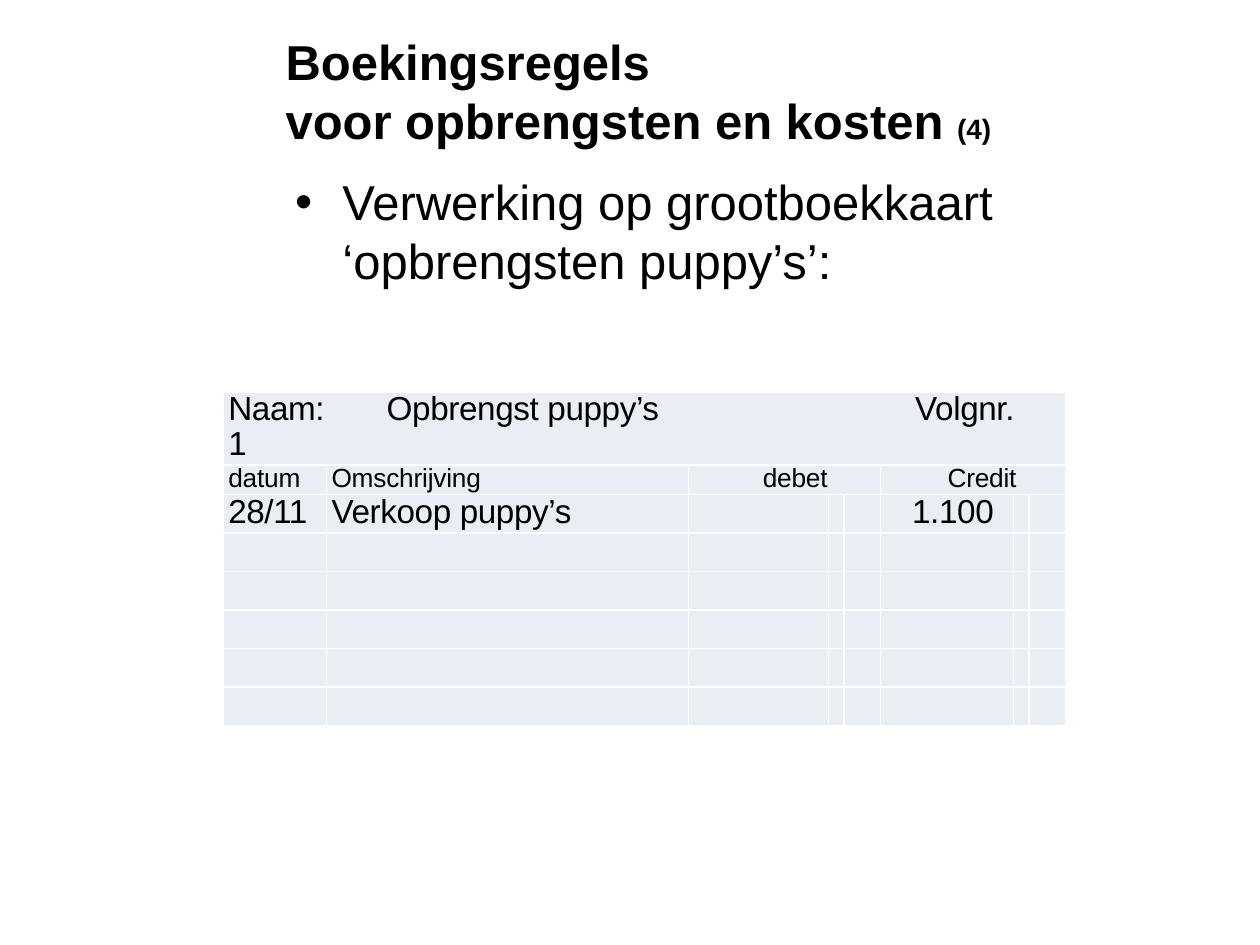
from dataclasses import dataclass

from lxml import etree
from pptx import Presentation
from pptx import util as u
from pptx.dml.color import RGBColor
from pptx.enum import text
from pptx.oxml import ns


@dataclass(frozen=True)
class Theme:
    """Colours, typeface and type sizes of the slide."""
    font: str = "Arial"
    ink: str = "000000"
    cell: str = "E9EDF4"
    rule: str = "FFFFFF"
    heading: int = 28
    counter: int = 16
    entry: int = 19
    label: int = 15


class LedgerPage:
    """Holds the theme and the current slide and adds its elements."""

    def __init__(self, deck, theme):
        self.theme = theme
        self.page = deck.slides.add_slide(deck.slide_layouts[1])

    def place(self, box, left, top, width, height):
        """Move a placeholder and return its text frame."""
        box.left, box.top = u.Pt(left), u.Pt(top)
        box.width, box.height = u.Pt(width), u.Pt(height)
        frame = box.text_frame
        frame.word_wrap = True
        frame.auto_size = text.MSO_AUTO_SIZE.NONE
        return frame

    def span(self, para, words, size, bold=False, tracking=0):
        """Add one formatted run."""
        span = para.add_run()
        span.text = words
        span.font.name = self.theme.font
        span.font.size = u.Pt(size)
        span.font.bold = bold
        span.font.color.rgb = RGBColor.from_string(self.theme.ink)
        if tracking:
            span._r.get_or_add_rPr().set("spc", str(round(tracking * 100)))

    def title(self, lines, counter, area):
        """Fill the title with lines and a small counter."""
        frame = self.place(self.page.shapes.title, *area)
        frame.vertical_anchor = text.MSO_ANCHOR.MIDDLE
        para = frame.paragraphs[0]
        para.alignment = text.PP_ALIGN.LEFT
        for number, line in enumerate(lines):
            if number:
                para.add_line_break()
            self.span(para, line, self.theme.heading, bold=True)
        self.span(para, counter, self.theme.counter, bold=True)

    def bullet(self, words, area, indent):
        """Fill the body with one bulleted paragraph."""
        para = self.place(self.page.placeholders[1], *area).paragraphs[0]
        settings = para._p.get_or_add_pPr()
        settings.set("marL", str(u.Pt(indent)))
        settings.set("indent", str(-u.Pt(indent)))
        etree.SubElement(settings, ns.qn("a:buChar"), char="•")
        para.space_before = u.Pt(0)
        self.span(para, words, self.theme.heading)

    def style_cell(self, cell):
        """Give a cell its insets, white rules and fill."""
        cell.margin_left = cell.margin_right = u.Pt(3)
        cell.margin_top = cell.margin_bottom = u.Pt(0)
        settings = cell._tc.get_or_add_tcPr()
        for side in ("lnL", "lnR", "lnT", "lnB"):
            line = etree.SubElement(settings, ns.qn(f"a:{side}"), w=str(u.Pt(1)))
            fill = etree.SubElement(line, ns.qn("a:solidFill"))
            etree.SubElement(fill, ns.qn("a:srgbClr"), val=self.theme.rule)
        cell.fill.solid()
        cell.fill.fore_color.rgb = RGBColor.from_string(self.theme.cell)

    def write_cell(self, cell, lines, size, tracking, tabs=(), indent=0):
        """Write lines into a cell with tab stops and an indent."""
        para = cell.text_frame.paragraphs[0]
        settings = para._p.get_or_add_pPr()
        settings.set("marL", str(u.Pt(indent)))
        if tabs:
            stops = etree.SubElement(settings, ns.qn("a:tabLst"))
            for place, kind in tabs:
                etree.SubElement(stops, ns.qn("a:tab"), pos=str(u.Pt(place)), algn=kind)
        para.line_spacing = 0.96
        para.space_before = u.Pt(0)
        for number, line in enumerate(lines):
            if number:
                para.add_line_break()
            self.span(para, line, size, tracking=tracking)

    def table(self, left, top, widths, heights, merges):
        """Add a styled empty table and return it."""
        frame = self.page.shapes.add_table(
            len(heights), len(widths), u.Pt(left), u.Pt(top),
            u.Pt(sum(widths)), u.Pt(sum(heights)))
        table = frame.table
        table.first_row = table.horz_banding = False
        for column, width in zip(table.columns, widths):
            column.width = u.Pt(width)
        for row, height in zip(table.rows, heights):
            row.height = u.Pt(height)
        for cell in table.iter_cells():
            self.style_cell(cell)
        for row, first, last in merges:
            table.cell(row, first).merge(table.cell(row, last))
        return table


def main():
    """Build the ledger card slide."""
    deck = Presentation()
    deck.slide_width, deck.slide_height = u.Pt(720), u.Pt(540)
    theme = Theme()
    ledger = LedgerPage(deck, theme)
    ledger.title(["Boekingsregels ", "voor opbrengsten en kosten "], "(4)",
                 (156, 26, 523.5, 51))
    ledger.bullet("Verwerking op grootboekkaart ‘opbrengsten puppy’s’:",
                  (161.5, 94.5, 522.5, 388), 27)

    card = ledger.table(
        127.5, 224, [59, 207, 80, 8, 21, 76, 8, 21], [41.8, 16.9] + [21.1] * 6,
        [(0, 0, 7), (1, 2, 4), (1, 5, 7)])
    entry, label = (theme.entry, -0.2), (theme.label, -0.1)
    contents = [
        (0, 0, ["Naam:\tOpbrengst puppy’s\tVolgnr.", "1"], entry,
         [(90.5, "l"), (392.5, "l")], 0),
        (1, 0, ["datum"], label, [], 0),
        (1, 1, ["Omschrijving"], label, [], 0),
        (1, 2, ["\tdebet"], label, [(58, "ctr")], 0),
        (1, 5, ["\tCredit"], label, [(55, "ctr")], 0),
        (2, 0, ["28/11"], entry, [], 0),
        (2, 1, ["Verkoop puppy’s"], entry, [], 0),
        (2, 5, ["1.100"], entry, [], 15),
    ]
    for row, column, lines, style, tabs, indent in contents:
        ledger.write_cell(card.cell(row, column), lines, *style, tabs, indent)
    deck.save("out.pptx")


if __name__ == "__main__":
    main()
